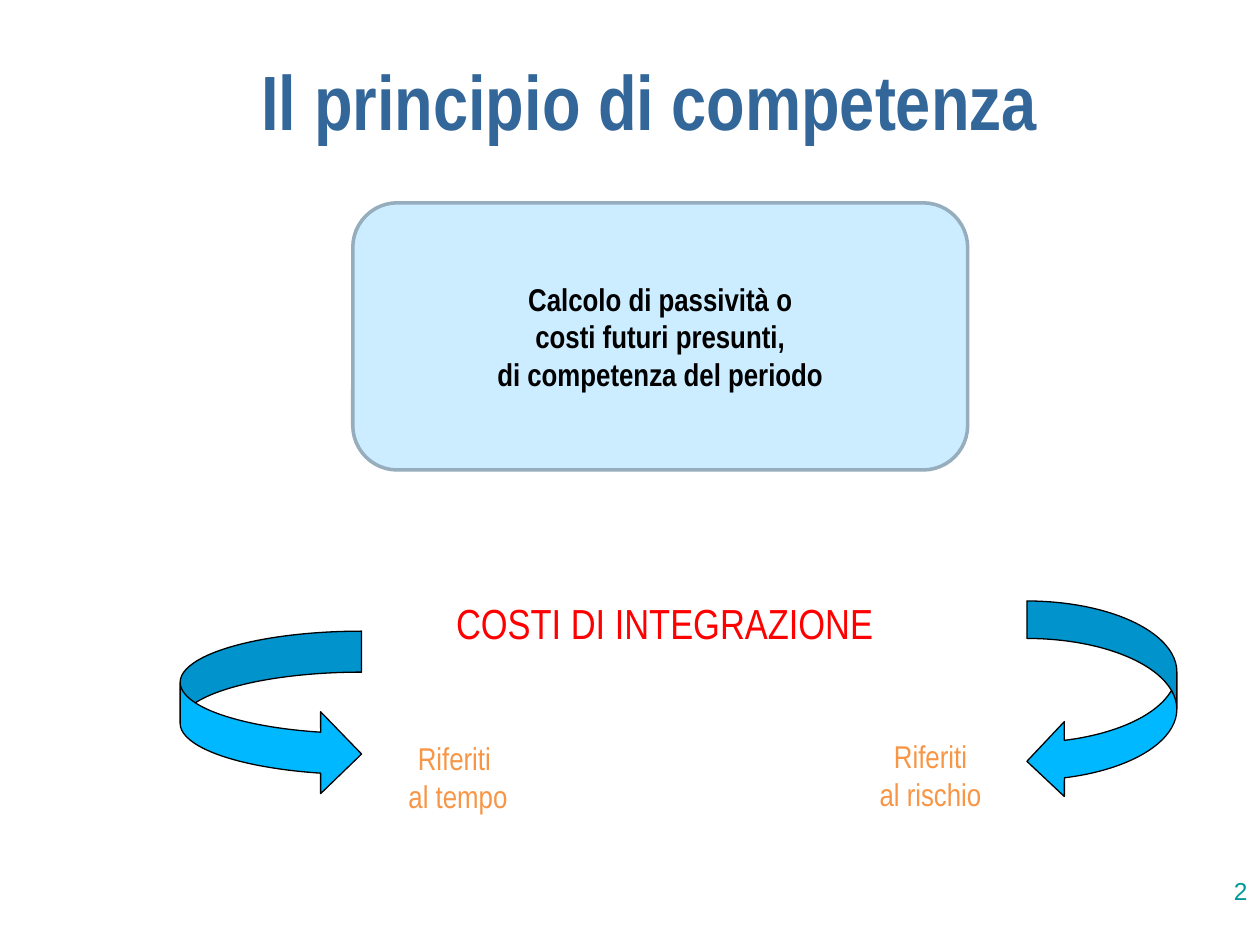
from pptx import Presentation
from pptx import util as u
from pptx.dml.color import RGBColor
from pptx.enum import shapes, text

COLORS = {
    "title": "336699",
    "number": "009999",
    "black": "000000",
    "panel": "CCECFF",
    "panel_line": "95ADBC",
    "heading": "FF0000",
    "label": "F79646",
    "arrow": "00B8FF",
}


def color(name):
    """Return the named palette colour."""
    return RGBColor.from_string(COLORS[name])


def write(shape, lines, size=18, ink="black", font="Arial Narrow", bold=False,
          align=text.PP_ALIGN.CENTER, anchor=text.MSO_ANCHOR.MIDDLE,
          wrap=True, spacing=None):
    """Fill a shape with one formatted paragraph for each line."""
    frame = shape.text_frame
    frame.text = "\n".join(lines)
    frame.word_wrap = wrap
    frame.auto_size = text.MSO_AUTO_SIZE.NONE
    frame.vertical_anchor = anchor
    for paragraph in frame.paragraphs:
        paragraph.alignment = align
        if spacing:
            paragraph.line_spacing = spacing
        for run in paragraph.runs:
            run.font.name = font
            run.font.size = u.Pt(size)
            run.font.bold = bold
            run.font.color.rgb = color(ink)


def add_title(slide, box, title):
    """Place and format the title placeholder."""
    shape = slide.shapes.title
    shape.left, shape.top, shape.width, shape.height = map(u.Inches, box)
    write(shape, [title], size=44, ink="title", bold=True, spacing=0.7)


def add_text(slide, box, lines, **style):
    """Add a text box with formatted lines."""
    write(slide.shapes.add_textbox(*map(u.Inches, box)), lines, **style)


def add_figure(slide, kind, box, fill, line, width):
    """Add a filled and outlined preset shape."""
    shape = slide.shapes.add_shape(kind, *map(u.Inches, box))
    shape.shadow.inherit = False
    shape.fill.solid()
    shape.fill.fore_color.rgb = color(fill)
    shape.line.color.rgb = color(line)
    shape.line.width = u.Pt(width)
    return shape


def main():
    """Build the slide and save it."""
    presentation = Presentation()
    presentation.slide_width = u.Inches(10)
    presentation.slide_height = u.Inches(7.5)
    slide = presentation.slides.add_slide(presentation.slide_layouts[5])
    kinds = shapes.MSO_SHAPE
    top = text.MSO_ANCHOR.TOP

    add_title(slide, (0.53, 0.17, 9.25, 1.42), "Il principio di competenza")
    panel = add_figure(slide, kinds.ROUNDED_RECTANGLE, (2.8, 1.61, 4.88, 2.12),
                       "panel", "panel_line", 2)
    write(panel, ["Calcolo di passività o", "costi futuri presunti,",
                  "di competenza del periodo"], bold=True)

    add_text(slide, (3.5, 4.69, 3.55, 0.5), ["COSTI DI INTEGRAZIONE"],
             size=24, ink="heading", anchor=top)
    for kind, box in (
        (kinds.CURVED_RIGHT_ARROW, (1.43, 5.01, 1.44, 1.3)),
        (kinds.CURVED_LEFT_ARROW, (8.15, 4.77, 1.19, 1.57)),
    ):
        add_figure(slide, kind, box, "arrow", "black", 0.75)

    add_text(slide, (2.42, 5.91, 2.43, 0.51), ["Riferiti ", "al tempo"],
             ink="label", wrap=False)
    add_text(slide, (6.73, 5.8, 1.31, 0.71), ["Riferiti", "al rischio"],
             ink="label", anchor=top)
    add_text(slide, (7.92, 6.82, 2.08, 0.5), ["2"], size=14, ink="number",
             font="Arial", align=text.PP_ALIGN.RIGHT, wrap=False)
    presentation.save("out.pptx")


if __name__ == "__main__":
    main()
